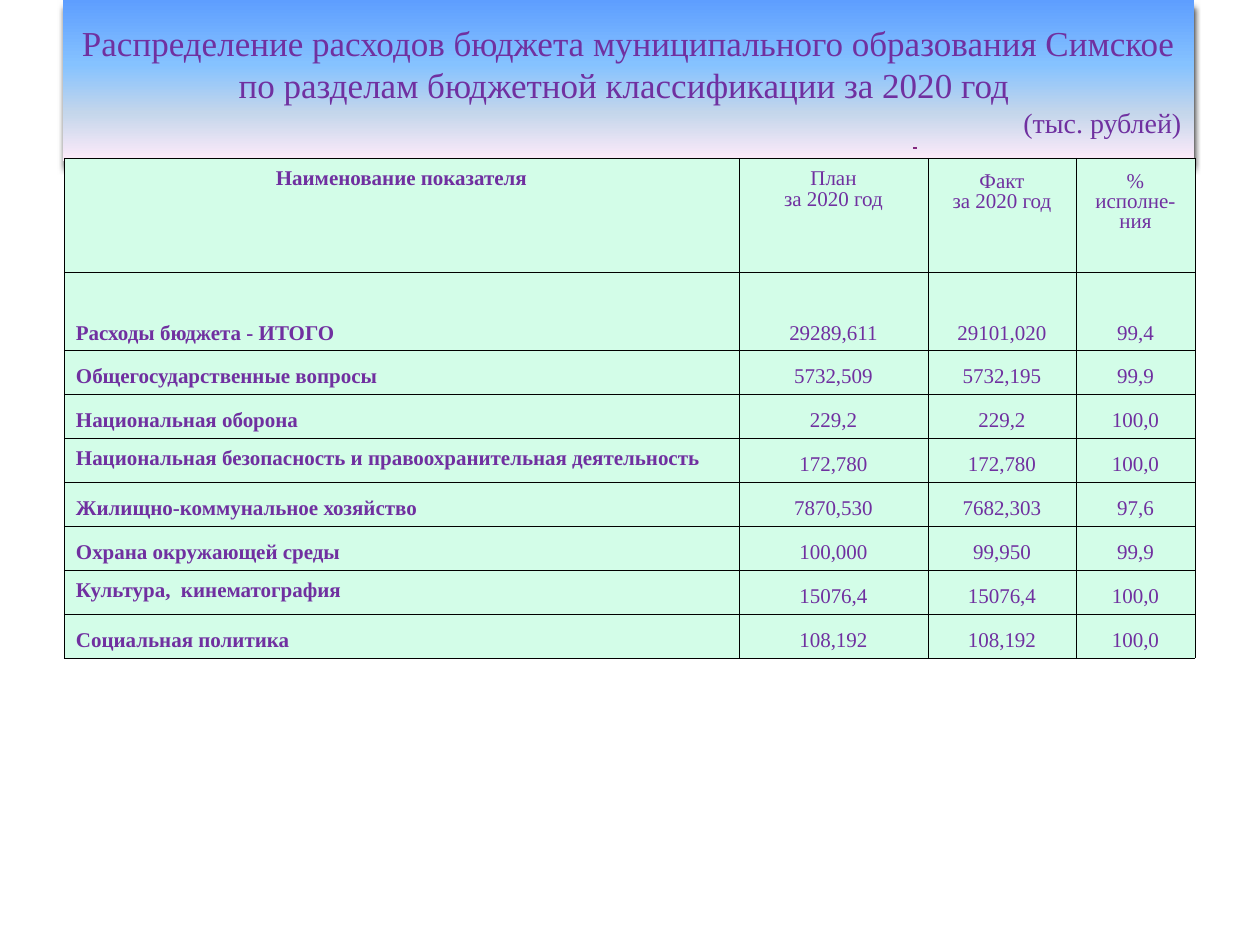
from dataclasses import dataclass

from lxml.etree import SubElement
from pptx import Presentation
from pptx.dml.color import RGBColor
from pptx.enum.shapes import MSO_CONNECTOR
from pptx.enum.text import MSO_ANCHOR, MSO_AUTO_SIZE, PP_ALIGN
from pptx.oxml.ns import qn
from pptx.util import Emu, Pt


@dataclass(frozen=True)
class Theme:
    font: str = "Times New Roman"
    text: str = "7030A0"
    cell: str = "D3FDE8"
    border: str = "000000"
    mark: str = "83297F"
    gradient: tuple = ((0, "5E9EFF"), (40, "85C2FF"), (70, "C4D6EB"), (100, "FFEBFA"))
    title_size: int = 20
    unit_size: int = 16
    table_size: int = 12


THEME = Theme()
EMU_PER_PX = 914400 / 126
TITLE = (
    "Распределение расходов бюджета муниципального образования Симское "
    "по разделам бюджетной классификации за 2020 год "
)
UNITS = "(тыс. рублей)"
HEADERS = ["Наименование показателя", "План\nза 2020 год", "Факт\nза 2020 год", "% исполне-ния"]
EXPENSES = [
    ["Расходы бюджета - ИТОГО", "29289,611", "29101,020", "99,4"],
    ["Общегосударственные вопросы", "5732,509", "5732,195", "99,9"],
    ["Национальная оборона", "229,2", "229,2", "100,0"],
    ["Национальная безопасность и правоохранительная деятельность", "172,780", "172,780", "100,0"],
    ["Жилищно-коммунальное хозяйство", "7870,530", "7682,303", "97,6"],
    ["Охрана окружающей среды", "100,000", "99,950", "99,9"],
    ["Культура,  кинематография", "15076,4", "15076,4", "100,0"],
    ["Социальная политика", "108,192", "108,192", "100,0"],
]
TOP_ALIGNED_NAMES = (4, 7)
COLUMN_WIDTHS = [675, 189, 148, 119]
ROW_HEIGHTS = [114, 78] + [44] * 7


def px(length):
    return Emu(round(length * EMU_PER_PX))


def write_text(paragraph, text, *, size, bold=False, align=PP_ALIGN.CENTER, spacing=None):
    paragraph.alignment = align
    paragraph.line_spacing = spacing
    run = paragraph.add_run()
    run.text = text
    run.font.name = THEME.font
    run.font.size = Pt(size)
    run.font.bold = bold
    run.font.color.rgb = RGBColor.from_string(THEME.text)


def add_solid_fill(parent, color):
    fill = SubElement(parent, qn("a:solidFill"))
    SubElement(fill, qn("a:srgbClr"), val=color)


def add_gradient_and_shadow(shape):
    properties = shape.element.spPr
    gradient = SubElement(properties, qn("a:gradFill"), rotWithShape="1")
    stops = SubElement(gradient, qn("a:gsLst"))
    for percent, color in THEME.gradient:
        stop = SubElement(stops, qn("a:gs"), pos=str(percent * 1000))
        SubElement(stop, qn("a:srgbClr"), val=color)
    SubElement(gradient, qn("a:lin"), ang="5400000", scaled="0")
    effects = SubElement(properties, qn("a:effectLst"))
    shadow = SubElement(
        effects, qn("a:outerShdw"), blurRad=str(Pt(4)), dist=str(Pt(4)),
        dir="5400000", rotWithShape="0",
    )
    SubElement(shadow, qn("a:srgbClr"), val=THEME.border)


def place_title(slide, left, top, width, height):
    title = slide.shapes.title
    title.left, title.top, title.width, title.height = map(px, (left, top, width, height))
    add_gradient_and_shadow(title)
    frame = title.text_frame
    frame.word_wrap = True
    frame.auto_size = MSO_AUTO_SIZE.NONE
    frame.vertical_anchor = MSO_ANCHOR.MIDDLE
    write_text(frame.paragraphs[0], TITLE, size=THEME.title_size)
    write_text(frame.add_paragraph(), UNITS, size=THEME.unit_size, align=PP_ALIGN.RIGHT)


def add_borders(cell):
    properties = cell._tc.get_or_add_tcPr()
    for position, side in enumerate(("a:lnL", "a:lnR", "a:lnT", "a:lnB")):
        line = properties.makeelement(qn(side), {"w": str(Pt(0.11))})
        add_solid_fill(line, THEME.border)
        properties.insert(position, line)


def fill_cell(cell, text, row, column):
    is_header = row == 0
    is_name = column == 0
    is_top = is_header or (is_name and row in TOP_ALIGNED_NAMES)
    cell.fill.solid()
    cell.fill.fore_color.rgb = RGBColor.from_string(THEME.cell)
    cell.vertical_anchor = MSO_ANCHOR.TOP if is_top else MSO_ANCHOR.BOTTOM
    cell.margin_left = cell.margin_right = px(12)
    cell.margin_top = px(14 if is_header and column > 1 else 12)
    cell.margin_bottom = px(6)
    add_borders(cell)
    frame = cell.text_frame
    for index, line in enumerate(text.split("\n")):
        paragraph = frame.add_paragraph() if index else frame.paragraphs[0]
        write_text(
            paragraph, line, size=THEME.table_size, bold=is_name, spacing=0.86,
            align=PP_ALIGN.LEFT if is_name and not is_header else PP_ALIGN.CENTER,
        )


def place_expense_table(slide, left, top):
    rows = [HEADERS, *EXPENSES]
    table = slide.shapes.add_table(
        len(rows), len(HEADERS), px(left), px(top),
        px(sum(COLUMN_WIDTHS)), px(sum(ROW_HEIGHTS)),
    ).table
    table.first_row = table.horz_banding = False
    for column, width in zip(table.columns, COLUMN_WIDTHS):
        column.width = px(width)
    for row, height in zip(table.rows, ROW_HEIGHTS):
        row.height = px(height)
    for row, texts in enumerate(rows):
        for column, text in enumerate(texts):
            fill_cell(table.cell(row, column), text, row, column)


def place_mark(slide, left, top, height):
    mark = slide.shapes.add_connector(
        MSO_CONNECTOR.STRAIGHT, px(left), px(top), px(left), px(top + height)
    )
    mark.line.color.rgb = RGBColor.from_string(THEME.mark)
    mark.line.width = Pt(2)
    SubElement(mark.element.spPr, qn("a:effectLst"))


def main():
    presentation = Presentation()
    presentation.slide_width = px(1260)
    presentation.slide_height = px(945)
    slide = presentation.slides.add_slide(presentation.slide_layouts[5])
    place_title(slide, 63, 0, 1131, 161)
    place_expense_table(slide, 64, 158)
    place_mark(slide, 915, 147, 2)
    presentation.save("out.pptx")


if __name__ == "__main__":
    main()
